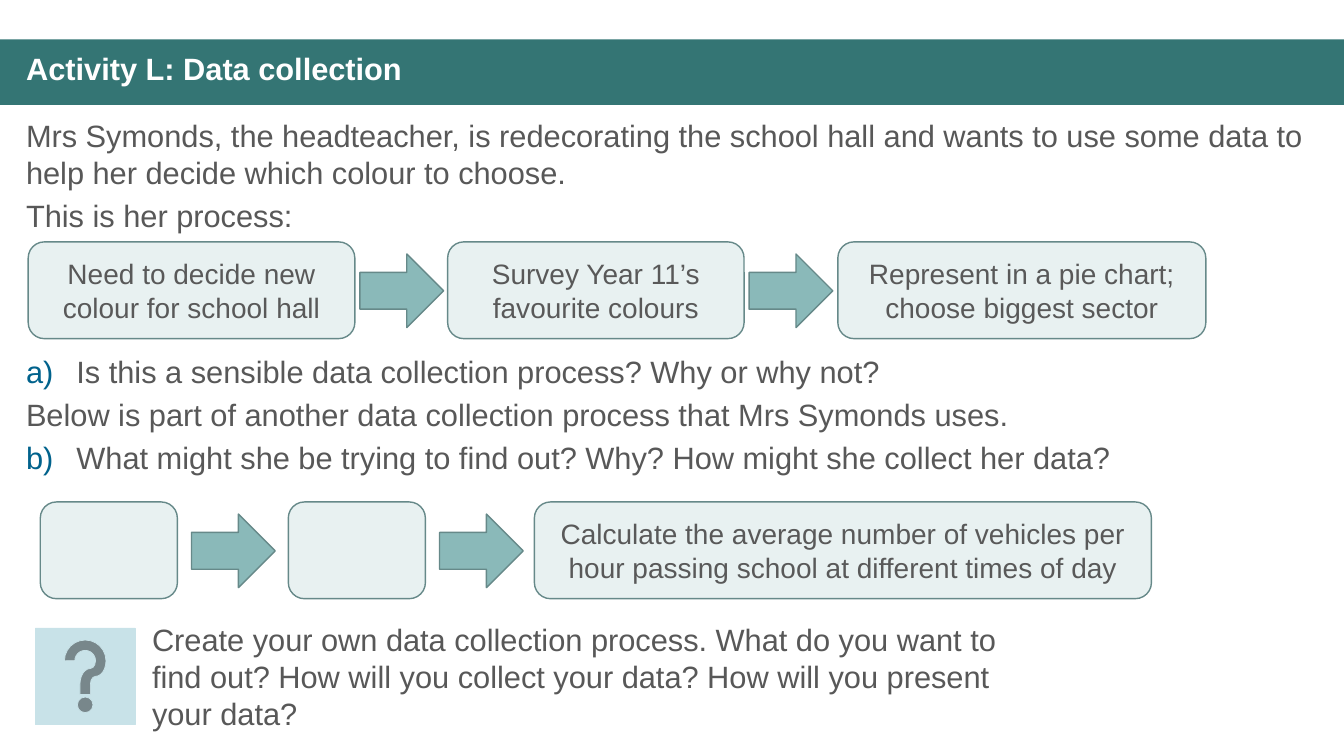
from dataclasses import dataclass

from lxml import etree
from pptx import Presentation
from pptx.dml.color import RGBColor
from pptx.enum import shapes, text
from pptx.oxml import ns
from pptx.util import Inches, Pt


@dataclass(frozen=True)
class Theme:
    font: str = "Arial"
    body_size: int = 22
    step_size: int = 20
    banner: str = "347574"
    title: str = "FFFFFF"
    body: str = "585858"
    step_text: str = "595959"
    step_fill: str = "E8F1F1"
    step_line: str = "668989"
    arrow: str = "8AB9B9"
    help: str = "C8E2E8"
    number: str = "00628C"
    paragraph_gap: float = 0.2  # share of the type size


class ActivitySlide:
    def __init__(self, deck, theme):
        self.theme = theme
        self.slide = deck.slides.add_slide(deck.slide_layouts[5])

    def style(self, paragraph, size, color, bold=False):
        paragraph.space_before = Pt(size * self.theme.paragraph_gap)
        for run in paragraph.runs:
            run.font.name = self.theme.font
            run.font.size = Pt(size)
            run.font.bold = bold
            run.font.color.rgb = RGBColor.from_string(color)

    def shape(self, kind, left, top, width, height, fill, line=None, weight=1):
        item = self.slide.shapes.add_shape(
            kind, Inches(left), Inches(top), Inches(width), Inches(height))
        item.shadow.inherit = False
        item.fill.solid()
        item.fill.fore_color.rgb = RGBColor.from_string(fill)
        if line:
            item.line.color.rgb = RGBColor.from_string(line)
            item.line.width = Pt(weight)
        else:
            item.line.fill.background()
        return item

    def title(self, wording, left, top, width, height):
        heading = self.slide.shapes.title
        heading.left, heading.top = Inches(left), Inches(top)
        heading.width, heading.height = Inches(width), Inches(height)
        frame = heading.text_frame
        frame.text = wording
        frame.word_wrap = True
        frame.auto_size = text.MSO_AUTO_SIZE.NONE
        frame.vertical_anchor = text.MSO_ANCHOR.TOP
        line = frame.paragraphs[0]
        line.alignment = text.PP_ALIGN.LEFT
        self.style(line, self.theme.body_size, self.theme.title, bold=True)
        line.line_spacing = 0.9

    def step(self, wording, left, top, width, height):
        box = self.shape(shapes.MSO_SHAPE.ROUNDED_RECTANGLE, left, top, width,
                         height, self.theme.step_fill, self.theme.step_line)
        if wording:
            frame = box.text_frame
            frame.text = wording
            frame.word_wrap = True
            frame.vertical_anchor = text.MSO_ANCHOR.MIDDLE
            line = frame.paragraphs[0]
            line.alignment = text.PP_ALIGN.CENTER
            self.style(line, self.theme.step_size, self.theme.step_text)

    def arrow(self, left, top):
        self.shape(shapes.MSO_SHAPE.RIGHT_ARROW, left, top, 0.83, 0.73,
                   self.theme.arrow, self.theme.step_line)

    def process(self, top, steps, arrows):
        for wording, left, width in steps:
            self.step(wording, left, top, width, 0.96)
        for left in arrows:
            self.arrow(left, top + 0.12)

    def passage(self, lines, left, top, width, height, questions=()):
        box = self.slide.shapes.add_textbox(
            Inches(left), Inches(top), Inches(width), Inches(height))
        frame = box.text_frame
        frame.word_wrap = True
        frame.text = "\n".join(lines)
        for paragraph in frame.paragraphs:
            self.style(paragraph, self.theme.body_size, self.theme.body)
        for start, index in enumerate(questions, 1):
            self.letter(frame.paragraphs[index], start)

    def letter(self, paragraph, start):
        properties = paragraph._p.get_or_add_pPr()
        properties.set("marL", str(Inches(0.5)))
        properties.set("indent", str(-Inches(0.5)))
        color = etree.SubElement(properties, ns.qn("a:buClr"))
        etree.SubElement(color, ns.qn("a:srgbClr"), val=self.theme.number)
        etree.SubElement(properties, ns.qn("a:buFont"), typeface=self.theme.font)
        etree.SubElement(properties, ns.qn("a:buAutoNum"),
                         type="alphaLcParenR", startAt=str(start))


def main():
    deck = Presentation()
    deck.slide_width, deck.slide_height = Inches(13.33), Inches(7.5)
    theme = Theme()
    activity = ActivitySlide(deck, theme)

    # Banner, placed behind the title
    banner = activity.shape(shapes.MSO_SHAPE.RECTANGLE, 0, 0.39, 13.33, 0.65,
                            theme.banner)
    activity.slide.shapes.title._element.addprevious(banner._element)
    activity.title("Activity L: Data collection", 0.16, 0.48, 13.04, 0.47)

    # Introduction and first process
    activity.passage(
        ["Mrs Symonds, the headteacher, is redecorating the school hall and "
         "wants to use some data to help her decide which colour to choose.",
         "This is her process:"], 0.16, 1.11, 12.9, 1.29)
    activity.process(2.4, [
        ("Need to decide new colour for school hall", 0.28, 3.24),
        ("Survey Year 11’s favourite colours", 4.44, 2.94),
        ("Represent in a pie chart; choose biggest sector", 8.31, 3.65),
    ], arrows=(3.57, 7.43))

    # Questions and second process
    activity.passage(
        ["Is this a sensible data collection process? Why or why not?",
         "Below is part of another data collection process that Mrs Symonds uses.",
         "What might she be trying to find out? Why? How might she collect her data?"],
        0.16, 3.45, 11.3, 1.36, questions=(0, 2))
    activity.process(4.98, [
        ("", 0.4, 1.36),
        ("", 2.86, 1.36),
        ("Calculate the average number of vehicles per hour passing school "
         "at different times of day", 5.3, 6.12),
    ], arrows=(1.9, 4.36))

    # Closing task
    activity.shape(shapes.MSO_SHAPE.ACTION_BUTTON_HELP, 0.35, 6.23, 0.99, 0.96,
                   theme.help, theme.help, 0.5)
    activity.passage(
        ["Create your own data collection process. What do you want to find out? "
         "How will you collect your data? How will you present your data?"],
        1.41, 6.11, 8.66, 1.21)

    deck.save("out.pptx")


if __name__ == "__main__":
    main()
